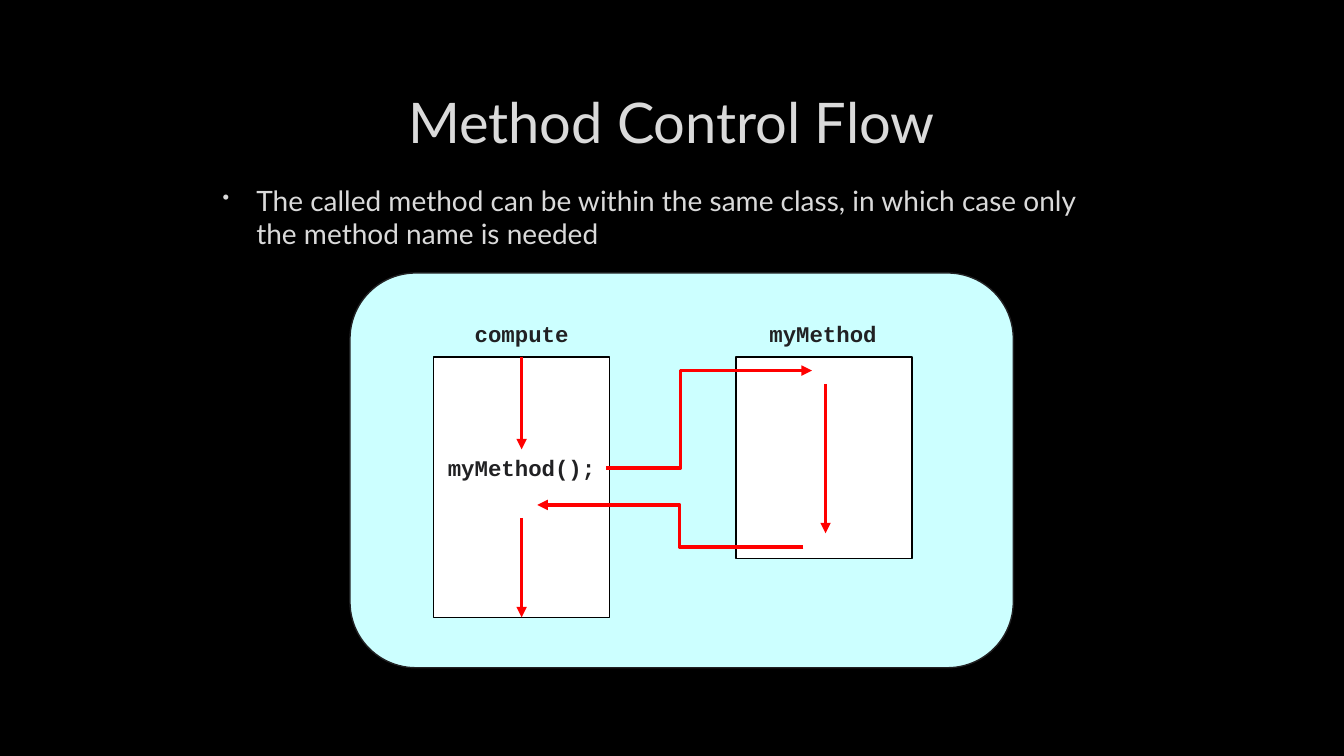
from dataclasses import dataclass

from lxml.etree import SubElement
from pptx import Presentation
from pptx.dml.color import RGBColor
from pptx.enum.shapes import MSO_CONNECTOR, MSO_SHAPE
from pptx.enum.text import MSO_ANCHOR, MSO_AUTO_SIZE, PP_ALIGN
from pptx.oxml.ns import qn
from pptx.util import Pt


@dataclass(frozen=True)
class Theme:
    background: str = "000000"
    heading: str = "DADADA"
    ink: str = "212123"
    panel: str = "CCFFFF"
    box: str = "FFFFFF"
    box_edge: str = "000000"
    flow: str = "FF0000"
    text_font: str = "Lato"
    code_font: str = "Courier New"
    title_size: float = 40
    body_size: float = 20
    code_size: float = 16
    edge_width: float = 1
    flow_width: float = 2.5


THEME = Theme()
CODE_CHAR_WIDTH = 0.6 * THEME.code_size
LABEL_HEIGHT = 26.6


def rgb(value):
    return RGBColor.from_string(value)


def add_text(slide, text, left, top, width, height, *, size, color=THEME.heading,
             font=THEME.text_font, bold=False, align=PP_ALIGN.LEFT,
             anchor=MSO_ANCHOR.MIDDLE, wrap=True):
    textbox = slide.shapes.add_textbox(Pt(left), Pt(top), Pt(width), Pt(height))
    frame = textbox.text_frame
    frame.word_wrap = wrap
    frame.auto_size = MSO_AUTO_SIZE.NONE if wrap else MSO_AUTO_SIZE.SHAPE_TO_FIT_TEXT
    frame.vertical_anchor = anchor
    paragraph = frame.paragraphs[0]
    paragraph.alignment = align
    run = paragraph.add_run()
    run.text = text
    run.font.name = font
    run.font.size = Pt(size)
    run.font.bold = bold
    run.font.color.rgb = rgb(color)
    return textbox


def add_code_label(slide, text, center, top):
    """Place code text centred on x, in a frame as wide as its characters."""
    width = len(text) * CODE_CHAR_WIDTH + 14.4
    add_text(slide, text, center - width / 2, top, width, LABEL_HEIGHT,
             size=THEME.code_size, color=THEME.ink, font=THEME.code_font,
             bold=True, align=PP_ALIGN.CENTER, wrap=False)


def make_bullet(paragraph):
    paragraph.space_before = Pt(4)
    paragraph.space_after = Pt(6)
    properties = paragraph._p.get_or_add_pPr()
    properties.set("marL", str(Pt(27)))
    properties.set("indent", str(Pt(-24)))
    color = SubElement(properties, qn("a:buClr"))
    SubElement(color, qn("a:srgbClr"), val=THEME.heading)
    SubElement(properties, qn("a:buSzPct"), val="70000")
    SubElement(properties, qn("a:buChar"), char="•")


def add_block(slide, kind, left, top, width, height, fill, edge):
    block = slide.shapes.add_shape(kind, Pt(left), Pt(top), Pt(width), Pt(height))
    block.shadow.inherit = False
    block.fill.solid()
    block.fill.fore_color.rgb = rgb(fill)
    block.line.color.rgb = rgb(edge)
    block.line.width = Pt(THEME.edge_width)
    return block


def add_flow(slide, start, end, bend_x=None):
    """Draw a red arrow; with bend_x it turns twice at that x."""
    kind = MSO_CONNECTOR.STRAIGHT if bend_x is None else MSO_CONNECTOR.ELBOW
    arrow = slide.shapes.add_connector(kind, *map(Pt, (*start, *end)))
    arrow.line.color.rgb = rgb(THEME.flow)
    arrow.line.width = Pt(THEME.flow_width)
    SubElement(arrow.line._get_or_add_ln(), qn("a:tailEnd"), type="triangle")
    properties = arrow._element.spPr
    SubElement(properties, qn("a:effectLst"))
    if bend_x is not None:
        share = (bend_x - start[0]) / (end[0] - start[0])
        adjustments = properties.find(qn("a:prstGeom")).get_or_add_avLst()
        SubElement(adjustments, qn("a:gd"), name="adj1",
                   fmla=f"val {round(share * 100000)}")
    return arrow


def main():
    deck = Presentation()
    deck.slide_width, deck.slide_height = Pt(960), Pt(540)
    slide = deck.slides.add_slide(deck.slide_layouts[6])
    slide.background.fill.solid()
    slide.background.fill.fore_color.rgb = rgb(THEME.background)

    add_text(slide, "Method Control Flow", 72, 48.2, 815, 76.3,
             size=THEME.title_size, align=PP_ALIGN.CENTER)

    add_block(slide, MSO_SHAPE.FLOWCHART_ALTERNATE_PROCESS,
              250, 195, 473.8, 282, THEME.panel, THEME.ink)
    box_top, box_width = 255, 126
    compute_left, callee_left = 309.6, 525.6
    compute_center = compute_left + box_width / 2
    callee_center = callee_left + box_width / 2
    compute_box, _ = [
        add_block(slide, MSO_SHAPE.RECTANGLE, left, box_top, box_width, height,
                  THEME.box, THEME.box_edge)
        for left, height in ((compute_left, 186), (callee_left, 144))
    ]
    add_code_label(slide, "myMethod();", compute_center, 321)
    add_code_label(slide, "myMethod", callee_center - 0.7, 225)
    add_code_label(slide, "compute", compute_center, 225)

    entry = add_flow(slide, (compute_center, box_top), (compute_center, 321))
    entry.begin_connect(compute_box, 0)
    leave = add_flow(slide, (compute_center, 370), (compute_center, 441))
    leave.end_connect(compute_box, 2)
    add_flow(slide, (433, 334.3), (580, 264.7), bend_x=486)
    add_flow(slide, (589.7, 274.3), (589.7, 381))
    add_flow(slide, (573.8, 390.8), (383.8, 360.7), bend_x=485.4)

    point = add_text(
        slide,
        "The called method can be within the same class, "
        "in which case only the method name is needed",
        149, 127.4, 660, 62, size=THEME.body_size, anchor=MSO_ANCHOR.TOP)
    make_bullet(point.text_frame.paragraphs[0])

    deck.save("out.pptx")


if __name__ == "__main__":
    main()
